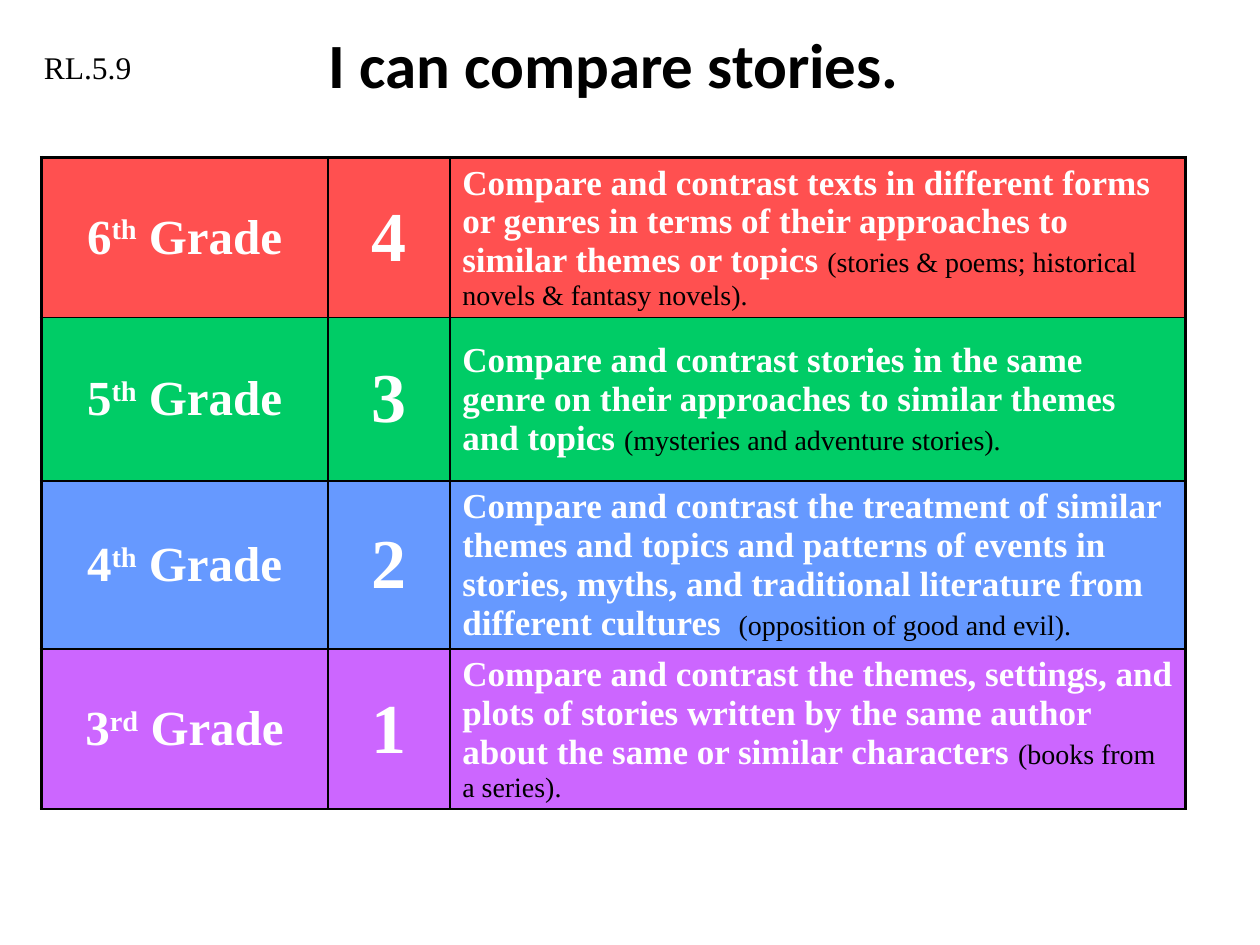
from lxml import etree
from pptx import Presentation
from pptx.dml.color import RGBColor
from pptx.enum.text import MSO_ANCHOR, PP_ALIGN
from pptx.oxml.ns import qn
from pptx.util import Inches, Pt

LEFT, CENTER = PP_ALIGN.LEFT, PP_ALIGN.CENTER
TOP, MIDDLE = MSO_ANCHOR.TOP, MSO_ANCHOR.MIDDLE
BLANK_LAYOUT = 6

COLORS = {
    "black": "000000",
    "white": "FFFFFF",
    "red": "FF5050",
    "green": "00CC66",
    "blue": "6699FF",
    "purple": "CC66FF",
}

COLUMN_WIDTHS = [2.27, 0.97, 5.84]
ROW_HEIGHTS = [1.27, 1.3, 1.33, 1.27]
VERTICAL_RULES = [2.25, 1.25, 1.25, 2.25]
HORIZONTAL_RULES = [2.25, 1.25, 1.25, 1.25, 1.25]

# Grade number, ordinal ending, score, colour, standard, example
GRADES = [
    ("6", "th", "4", "red",
     "Compare and contrast texts in different forms or genres in terms of "
     "their approaches to similar themes or topics ",
     "(stories & poems; historical novels & fantasy novels)."),
    ("5", "th", "3", "green",
     "Compare and contrast stories in the same genre on their approaches to "
     "similar themes and topics ",
     "(mysteries and adventure stories)."),
    ("4", "th", "2", "blue",
     "Compare and contrast the treatment of similar themes and topics and "
     "patterns of events in stories, myths, and traditional literature from "
     "different cultures  ",
     "(opposition of good and evil)."),
    ("3", "rd", "1", "purple",
     "Compare and contrast the themes, settings, and plots of stories written "
     "by the same author about the same or similar characters ",
     "(books from a series)."),
]


def add_run(paragraph, text, size=18, color="black", bold=False,
            font="Times New Roman", raised=False):
    run = paragraph.add_run()
    run.text = text
    run.font.name = font
    run.font.size = Pt(size)
    run.font.bold = bold
    run.font.color.rgb = RGBColor.from_string(COLORS[color])
    if raised:
        run.font._element.set("baseline", "30000")


def add_border(cell, side, width):
    """Draw one cell border; side is L, R, T or B, added in that order."""
    properties = cell._tc.get_or_add_tcPr()
    line = etree.SubElement(properties, qn(f"a:ln{side}"), w=str(Pt(width)))
    fill = etree.SubElement(line, qn("a:solidFill"))
    etree.SubElement(fill, qn("a:srgbClr"), val=COLORS["black"])


class SlideBuilder:
    def __init__(self, slide):
        self.slide = slide

    def text(self, left, top, width, height, text, align=LEFT, anchor=TOP,
             **style):
        box = self.slide.shapes.add_textbox(
            Inches(left), Inches(top), Inches(width), Inches(height))
        frame = box.text_frame
        frame.word_wrap = True
        frame.vertical_anchor = anchor
        paragraph = frame.paragraphs[0]
        paragraph.alignment = align
        add_run(paragraph, text, **style)

    def table(self, left, top):
        shape = self.slide.shapes.add_table(
            len(ROW_HEIGHTS), len(COLUMN_WIDTHS), Inches(left), Inches(top),
            Inches(sum(COLUMN_WIDTHS)), Inches(sum(ROW_HEIGHTS)))
        table = shape.table
        table.first_row = table.horz_banding = False
        for column, width in zip(table.columns, COLUMN_WIDTHS):
            column.width = Inches(width)
        for row, height in zip(table.rows, ROW_HEIGHTS):
            row.height = Inches(height)
        return table

    def cell(self, table, row, column, fill, align=LEFT):
        """Format one cell and return its paragraph."""
        cell = table.cell(row, column)
        add_border(cell, "L", VERTICAL_RULES[column])
        add_border(cell, "R", VERTICAL_RULES[column + 1])
        add_border(cell, "T", HORIZONTAL_RULES[row])
        add_border(cell, "B", HORIZONTAL_RULES[row + 1])
        cell.fill.solid()
        cell.fill.fore_color.rgb = RGBColor.from_string(COLORS[fill])
        cell.vertical_anchor = MIDDLE
        cell.margin_top = cell.margin_bottom = Inches(0)
        paragraph = cell.text_frame.paragraphs[0]
        paragraph.alignment = align
        return paragraph


def main():
    presentation = Presentation()
    presentation.slide_width = Inches(10)
    presentation.slide_height = Inches(7.5)
    layout = presentation.slide_layouts[BLANK_LAYOUT]
    builder = SlideBuilder(presentation.slides.add_slide(layout))

    builder.text(0.16, 0, 9.42, 1, "I can compare stories.", align=CENTER,
                 anchor=MIDDLE, size=36, bold=True, font="Calibri")

    table = builder.table(0.33, 1.25)
    heading = {"color": "white", "bold": True}
    for row, (number, ending, score, fill, standard, example) in enumerate(GRADES):
        grade = builder.cell(table, row, 0, fill, CENTER)
        add_run(grade, number, size=28, **heading)
        add_run(grade, ending, size=28, raised=True, **heading)
        add_run(grade, " Grade", size=28, **heading)
        add_run(builder.cell(table, row, 1, fill, CENTER), score, size=40, **heading)
        description = builder.cell(table, row, 2, fill)
        add_run(description, standard, size=20, **heading)
        add_run(description, example, size=16)

    builder.text(0.25, 0.33, 1.42, 0.4, "RL.5.9")
    presentation.save("out.pptx")


if __name__ == "__main__":
    main()
